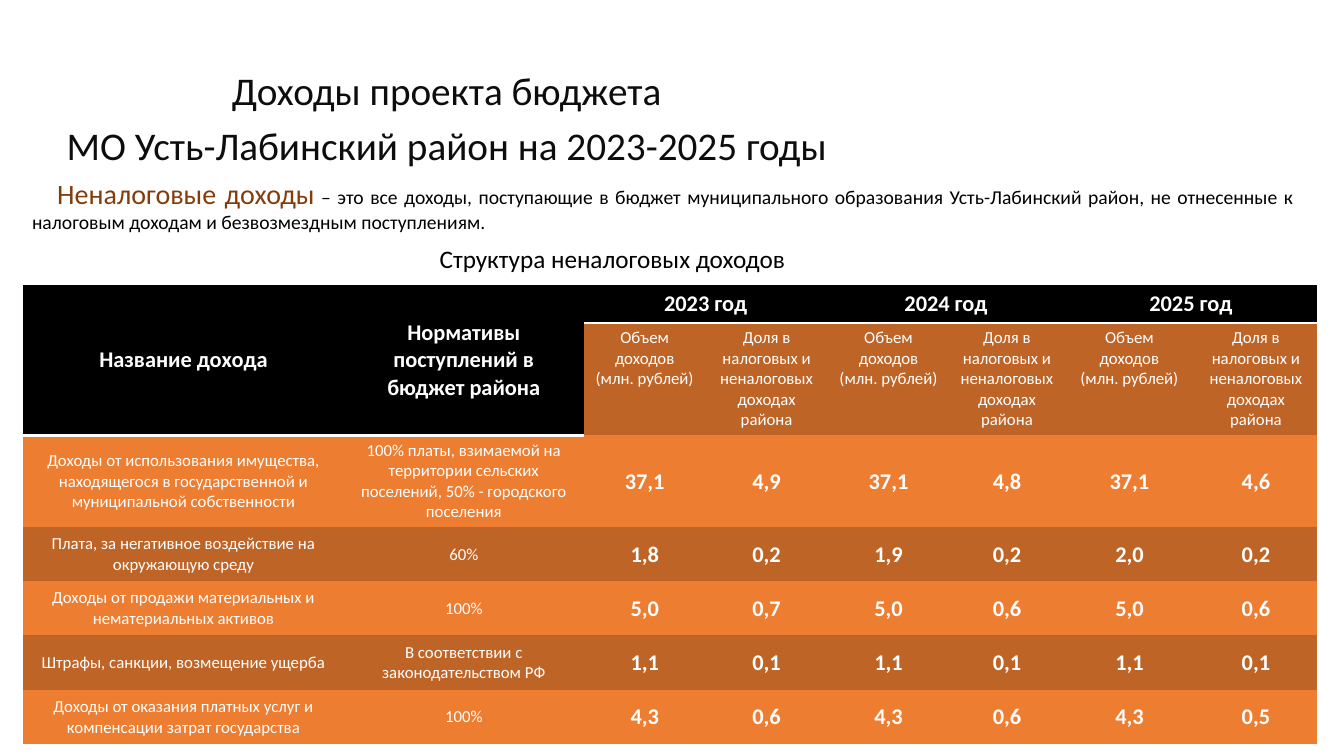
from typing import NamedTuple

from lxml.etree import SubElement
from pptx import Presentation
from pptx.dml.color import RGBColor
from pptx.enum.text import MSO_ANCHOR, MSO_AUTO_SIZE, PP_ALIGN
from pptx.oxml.ns import qn
from pptx.util import Pt

FONT = "Calibri"
BLACK, WHITE = "000000", "FFFFFF"
DARK, LIGHT = "BE6427", "ED7D31"
PLAIN = "{2D5ABB26-0587-4C30-8999-92F81FD0307C}"  # no style, no grid


class Box(NamedTuple):
    left: float
    top: float
    width: float
    height: float


class Income(NamedTuple):
    name: str
    norm: str
    values: str


INCOMES = [
    Income("Доходы от использования имущества, находящегося в государственной и муниципальной собственности",
           "100% платы, взимаемой на территории сельских поселений, 50% - городского поселения",
           "37,1 4,9 37,1 4,8 37,1 4,6"),
    Income("Плата, за негативное воздействие на окружающую среду", "60%", "1,8 0,2 1,9 0,2 2,0 0,2"),
    Income("Доходы от продажи материальных и нематериальных активов", "100%", "5,0 0,7 5,0 0,6 5,0 0,6"),
    Income("Штрафы, санкции, возмещение ущерба", "В соответствии с законодательством РФ",
           "1,1 0,1 1,1 0,1 1,1 0,1"),
    Income("Доходы от оказания платных услуг и компенсации затрат государства", "100%",
           "4,3 0,6 4,3 0,6 4,3 0,5"),
]
HEADS = ["Название дохода", "Нормативы поступлений в бюджет района"]
YEARS = ["2023 год", "2024 год", "2025 год"]
VOLUME = "Объем доходов\n(млн. рублей)"
SHARE = "Доля в налоговых и неналоговых доходах района"
WIDTHS = [229, 171.4, 87.1, 87.1, 87.1, 82.1, 92.9, 87.8]
HEIGHTS = [26.6, 79.2, 64.6, 38.6, 38.6, 39.2, 38.6]


def color(code: str) -> RGBColor:
    return RGBColor.from_string(code)


def style(run, size: float, code: str, bold: bool = False) -> None:
    font = run.font
    font.name, font.size, font.bold = FONT, Pt(size), bold
    font.color.rgb = color(code)


def write(frame, text: str, size: float, code: str, bold: bool = False) -> None:
    frame.text = text
    for line in frame.paragraphs:
        line.alignment = PP_ALIGN.CENTER
        for run in line.runs:
            style(run, size, code, bold)


def place(shape, box: Box) -> None:
    shape.left, shape.top, shape.width, shape.height = map(Pt, box)
    shape.text_frame.word_wrap = True
    shape.text_frame.auto_size = MSO_AUTO_SIZE.NONE
    shape.text_frame.vertical_anchor = MSO_ANCHOR.TOP


def add_text(slide, box: Box):
    shape = slide.shapes.add_textbox(0, 0, 0, 0)
    place(shape, box)
    return shape.text_frame


def fill_cell(cell, text: str, fill: str, size: float, bold: bool = False,
              anchor: MSO_ANCHOR = MSO_ANCHOR.MIDDLE) -> None:
    write(cell.text_frame, text, size, WHITE, bold)
    cell.vertical_anchor = anchor
    cell.fill.solid()
    cell.fill.fore_color.rgb = color(fill)


def rule_off(cell) -> None:
    props = cell._tc.get_or_add_tcPr()
    line = SubElement(props, qn("a:lnB"), w=str(Pt(2)))
    SubElement(SubElement(line, qn("a:solidFill")), qn("a:srgbClr"), val=WHITE)
    props.insert(0, line)


def add_head(table, text: str, first: tuple[int, int], last: tuple[int, int]) -> None:
    start, end = table.cell(*first), table.cell(*last)
    start.merge(end)
    fill_cell(start, text, BLACK, 16, True)
    rule_off(start)
    rule_off(end)


def add_grid(slide, box: Box) -> None:
    table = slide.shapes.add_table(len(HEIGHTS), len(WIDTHS), *map(Pt, box)).table
    table._tbl.tblPr.find(qn("a:tableStyleId")).text = PLAIN
    for col, width in zip(table.columns, WIDTHS):
        col.width = Pt(width)
    for row, height in zip(table.rows, HEIGHTS):
        row.height = Pt(height)

    # Header rows
    for col, text in enumerate(HEADS):
        add_head(table, text, (0, col), (1, col))
    for i, year in enumerate(YEARS):
        col = 2 + 2 * i
        add_head(table, year, (0, col), (0, col + 1))
        for step, text in enumerate([VOLUME, SHARE]):
            fill_cell(table.cell(1, col + step), text, DARK, 12, anchor=MSO_ANCHOR.TOP)

    # Income rows
    for i, item in enumerate(INCOMES):
        fill = DARK if i % 2 else LIGHT
        for col, text in enumerate([item.name, item.norm, *item.values.split()]):
            number = col > 1
            fill_cell(table.cell(i + 2, col), text, fill, 16 if number else 12, number)


def main() -> None:
    deck = Presentation()
    deck.slide_width, deck.slide_height = Pt(960), Pt(540)
    slide = deck.slides.add_slide(deck.slide_layouts[5])

    # Title
    title = slide.shapes.title
    place(title, Box(0, 44, 638, 32.4))
    write(title.text_frame, "Доходы проекта бюджета\nМО Усть-Лабинский район на 2023-2025 годы", 28, "0D0D0D")
    title.text_frame.paragraphs[1].space_before = Pt(5.6)

    # Definition
    line = add_text(slide, Box(15.8, 122.4, 915.8, 48.2)).paragraphs[0]
    line.alignment = PP_ALIGN.JUSTIFY
    line._p.get_or_add_pPr().set("indent", str(Pt(18)))
    for text, size, code in [
        ("Неналоговые доходы", 20, "843C0B"),
        (" – это все доходы, поступающие в бюджет муниципального образования Усть-Лабинский район, "
         "не отнесенные к налоговым доходам и безвозмездным поступлениям.", 14, BLACK),
    ]:
        run = line.add_run()
        run.text = text
        style(run, size, code)

    # Table with its heading
    write(add_text(slide, Box(79.2, 170.6, 716.4, 32.4)), "Структура неналоговых доходов", 18, BLACK)
    add_grid(slide, Box(16.6, 203.8, sum(WIDTHS), sum(HEIGHTS)))

    deck.save("out.pptx")


if __name__ == "__main__":
    main()
